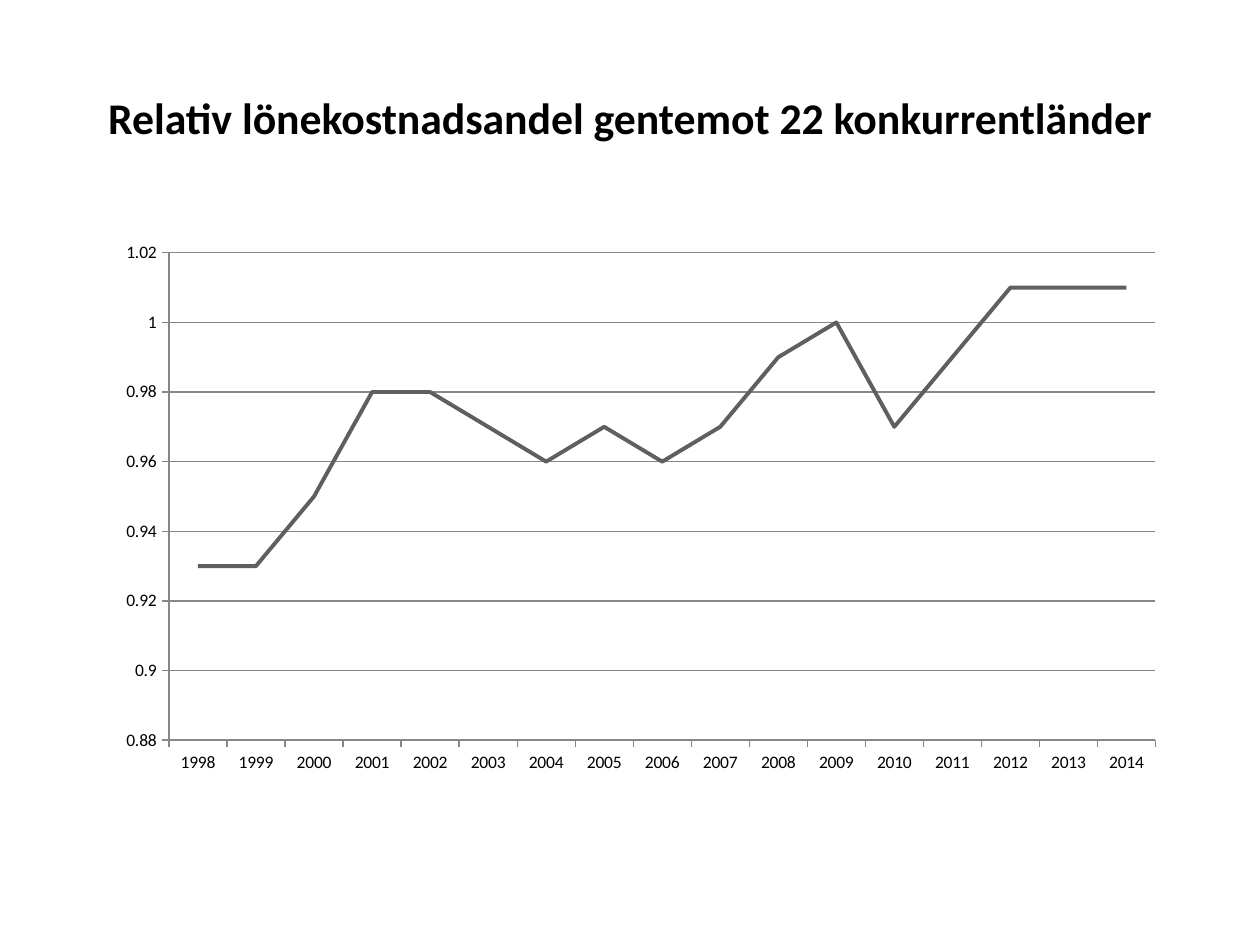
import pptx
import pptx.chart.data
import pptx.dml.color
import pptx.enum.chart
import pptx.enum.text
import pptx.util
from lxml import etree

COLORS = {"text": "000000", "axis": "878787", "share": "5F5F5F", "border": "FFFFFF"}
FONT = "Calibri"
SHARES = [0.93, 0.93, 0.95, 0.98, 0.98, 0.97, 0.96, 0.97, 0.96,
          0.97, 0.99, 1, 0.97, 0.99, 1.01, 1.01, 1.01]
PLOT_AREA = {"x": 0.093, "y": 0.051, "w": 0.871, "h": 0.783}


def style_font(font, size, bold=False):
    font.name, font.size, font.bold = FONT, pptx.util.Pt(size), bold
    font.color.rgb = pptx.dml.color.RGBColor.from_string(COLORS["text"])


def style_line(line, color, width):
    line.color.rgb = pptx.dml.color.RGBColor.from_string(COLORS[color])
    line.width = pptx.util.Pt(width)


deck = pptx.Presentation()
deck.slide_width = pptx.util.Inches(10)
deck.slide_height = pptx.util.Inches(7.5)
slide = deck.slides.add_slide(deck.slide_layouts[6])
margin = int(deck.slide_width * 0.05)
content_width = deck.slide_width - 2 * margin

# Heading
heading = slide.shapes.add_textbox(
    margin, int(deck.slide_height * 0.04), content_width, pptx.util.Inches(1.25))
frame = heading.text_frame
frame.word_wrap = True
frame.vertical_anchor = pptx.enum.text.MSO_ANCHOR.MIDDLE
frame.text = "Relativ lönekostnadsandel gentemot 22 konkurrentländer"
frame.paragraphs[0].alignment = pptx.enum.text.PP_ALIGN.CENTER
style_font(frame.paragraphs[0].runs[0].font, 25, bold=True)

# Wage cost share per year
wage_data = pptx.chart.data.CategoryChartData(number_format="General")
wage_data.categories = [str(year) for year in range(1998, 2015)]
wage_data.add_series("Series 1", SHARES)
chart = slide.shapes.add_chart(
    pptx.enum.chart.XL_CHART_TYPE.LINE, margin, pptx.util.Inches(1.75),
    content_width, int(deck.slide_height * 0.66), wage_data).chart
chart.has_title = False
chart.has_legend = False
style_font(chart.font, 10)

plot = chart.plots[0]
plot.vary_by_categories = False
share_line = plot.series[0]
share_line.smooth = False
share_line.marker.style = pptx.enum.chart.XL_MARKER_STYLE.NONE
style_line(share_line.format.line, "share", 2.25)

years, shares = chart.category_axis, chart.value_axis
for axis in (years, shares):
    axis.major_tick_mark = pptx.enum.chart.XL_TICK_MARK.OUTSIDE
    axis.minor_tick_mark = pptx.enum.chart.XL_TICK_MARK.NONE
    style_line(axis.format.line, "axis", 0.75)
years.has_major_gridlines = False
shares.has_major_gridlines = True
style_line(shares.major_gridlines.format.line, "axis", 0.75)
shares.minimum_scale, shares.maximum_scale, shares.major_unit = 0.88, 1.02, 0.02
shares.tick_labels.number_format = "General"
shares.tick_labels.number_format_is_linked = False

# Fixed inner plot area
plot_area = chart.element.chart.plotArea
for old_layout in plot_area.findall(pptx.oxml.ns.qn("c:layout")):
    plot_area.remove(old_layout)
layout = etree.Element(pptx.oxml.ns.qn("c:layout"))
plot_area.insert(0, layout)
manual = etree.SubElement(layout, pptx.oxml.ns.qn("c:manualLayout"))
settings = {"layoutTarget": "inner", "xMode": "edge", "yMode": "edge", **PLOT_AREA}
for tag, value in settings.items():
    etree.SubElement(manual, pptx.oxml.ns.qn(f"c:{tag}"), val=str(value))

# Chart border
border = pptx.oxml.parse_xml(
    f'<c:spPr {pptx.oxml.ns.nsdecls("c", "a")}><a:ln w="9525"><a:solidFill>'
    f'<a:srgbClr val="{COLORS["border"]}"/></a:solidFill></a:ln></c:spPr>')
chart.element.chart.addnext(border)

deck.save("out.pptx")
